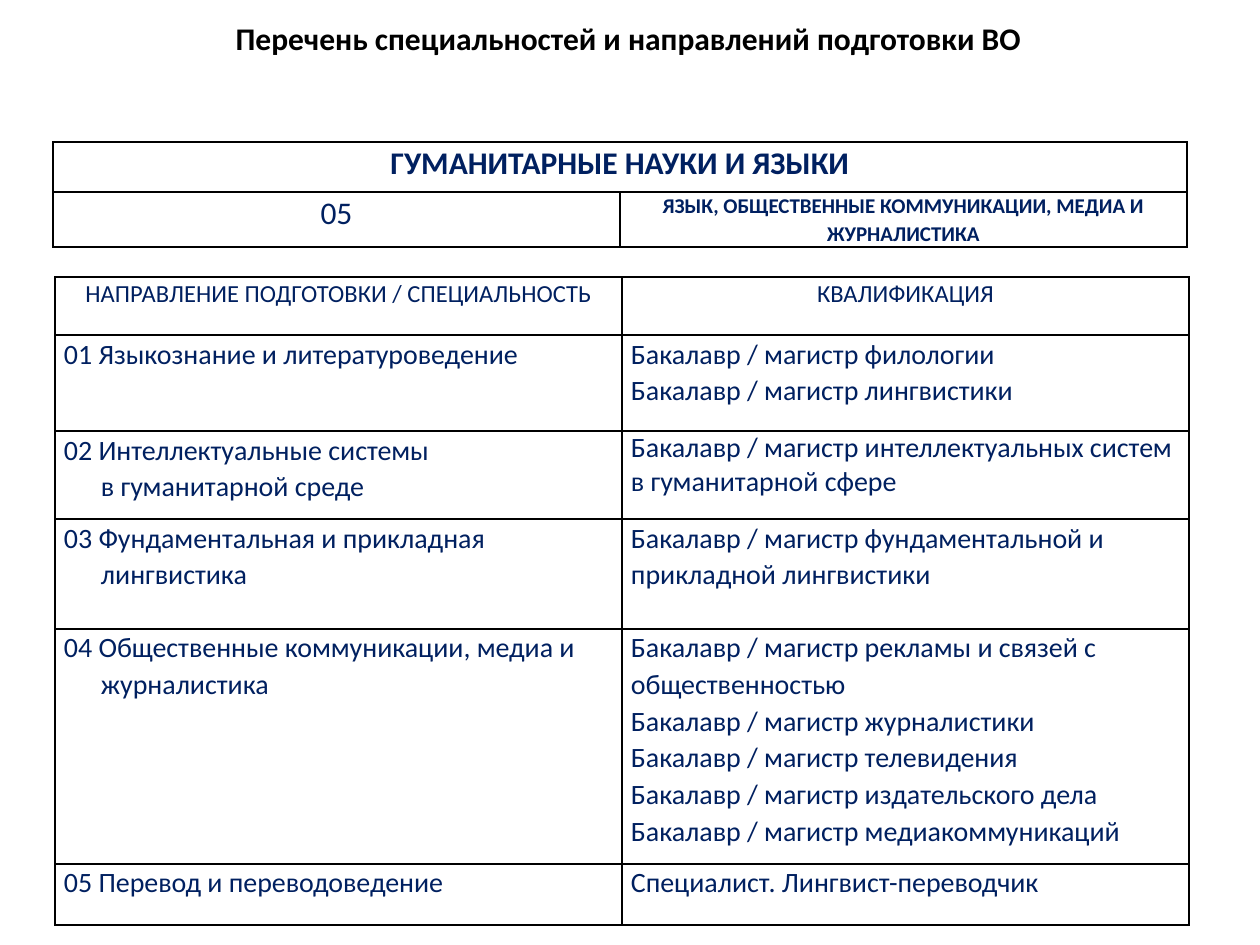
from dataclasses import dataclass

from lxml.etree import SubElement
from pptx import Presentation
from pptx.dml.color import RGBColor
from pptx.enum.text import PP_ALIGN
from pptx.oxml.ns import qn
from pptx.util import Pt

SCALE = 914400 / 126
NAVY = "002060"
BLACK = "000000"
FONT = "Calibri"


@dataclass
class Line:
    text: str
    size: int = 16
    bold: bool = False
    center: bool = False
    left: int = 0
    first: int = 0
    lead: float = 1.07
    before: int = 0
    after: int = 0


@dataclass
class Grid:
    left: int
    top: int
    heights: list[int]
    rows: list[list[list[Line]]]


def px(n: int) -> int:
    return round(n * SCALE)


def tint(code: str) -> RGBColor:
    return RGBColor.from_string(code)


def write(frame, lines: list[Line], color: str) -> None:
    frame.word_wrap = True
    frame.text = "\n".join(line.text for line in lines)
    for par, line in zip(frame.paragraphs, lines):
        par.alignment = PP_ALIGN.CENTER if line.center else PP_ALIGN.LEFT
        par.line_spacing = line.lead
        par.space_before = Pt(line.before)
        par.space_after = Pt(line.after)
        props = par._p.get_or_add_pPr()
        props.set("marL", str(px(line.left)))
        props.set("indent", str(px(line.first)))
        for run in par.runs:
            run.font.name = FONT
            run.font.size = Pt(line.size)
            run.font.bold = line.bold
            run.font.color.rgb = tint(color)


def style(cell) -> None:
    cell.margin_left = cell.margin_right = px(9)
    cell.margin_top = cell.margin_bottom = 0
    cell.fill.background()
    props = cell._tc.get_or_add_tcPr()
    for spot, side in enumerate(("lnL", "lnR", "lnT", "lnB")):
        edge = SubElement(props, qn(f"a:{side}"), w=str(Pt(1)))
        fill = SubElement(edge, qn("a:solidFill"))
        SubElement(fill, qn("a:srgbClr"), val=BLACK)
        props.insert(spot, edge)


def draw(slide, grid: Grid) -> None:
    shape = slide.shapes.add_table(
        len(grid.rows), 2, px(grid.left), px(grid.top), px(1134), px(sum(grid.heights))
    )
    table = shape.table
    table.first_row = table.horz_banding = False
    for row, height, cells in zip(table.rows, grid.heights, grid.rows):
        row.height = px(height)
        for cell in row.cells:
            style(cell)
        if len(cells) == 1:
            row.cells[0].merge(row.cells[1])
        for cell, lines in zip(row.cells, cells):
            write(cell.text_frame, lines, NAVY)


def head(text: str) -> list[Line]:
    return [Line(text, size=14, center=True)]


def plain(*texts: str) -> list[Line]:
    return [Line(text) for text in texts]


def hang(text: str) -> list[Line]:
    return [Line(text, left=37, first=-37)]


FIELD = Grid(53, 142, [50, 54], [
    [[Line("ГУМАНИТАРНЫЕ НАУКИ И ЯЗЫКИ", 18, True, True, before=6, after=6)]],
    [
        [Line("05", 18, center=True)],
        [Line("ЯЗЫК, ОБЩЕСТВЕННЫЕ КОММУНИКАЦИИ, МЕДИА И ЖУРНАЛИСТИКА",
              12, True, True, after=6)],
    ],
])

COURSES = Grid(55, 277, [58, 96, 88, 110, 235, 61], [
    [head("НАПРАВЛЕНИЕ ПОДГОТОВКИ / СПЕЦИАЛЬНОСТЬ"), head("КВАЛИФИКАЦИЯ")],
    [
        plain("01 Языкознание и литературоведение"),
        plain("Бакалавр / магистр филологии", "Бакалавр / магистр лингвистики"),
    ],
    [
        [Line("02 Интеллектуальные системы"), Line("в гуманитарной среде", left=37)],
        [Line("Бакалавр / магистр интеллектуальных систем в гуманитарной сфере", lead=1.0)],
    ],
    [
        hang("03 Фундаментальная и прикладная лингвистика"),
        plain("Бакалавр / магистр фундаментальной и прикладной лингвистики"),
    ],
    [
        hang("04 Общественные коммуникации, медиа и журналистика"),
        plain(
            "Бакалавр / магистр рекламы и связей с общественностью",
            "Бакалавр / магистр журналистики",
            "Бакалавр / магистр телевидения",
            "Бакалавр / магистр издательского дела",
            "Бакалавр / магистр медиакоммуникаций",
        ),
    ],
    [plain("05 Перевод и переводоведение"), plain("Специалист. Лингвист-переводчик")],
])


def main() -> None:
    deck = Presentation()
    deck.slide_width, deck.slide_height = px(1260), px(945)
    slide = deck.slides.add_slide(deck.slide_layouts[6])
    for grid in (FIELD, COURSES):
        draw(slide, grid)
    title = slide.shapes.add_textbox(px(71), px(13), px(1115), px(50))
    write(
        title.text_frame,
        [Line("Перечень специальностей и направлений подготовки ВО",
              18, True, True, lead=1.0)],
        BLACK,
    )
    deck.save("out.pptx")


if __name__ == "__main__":
    main()
